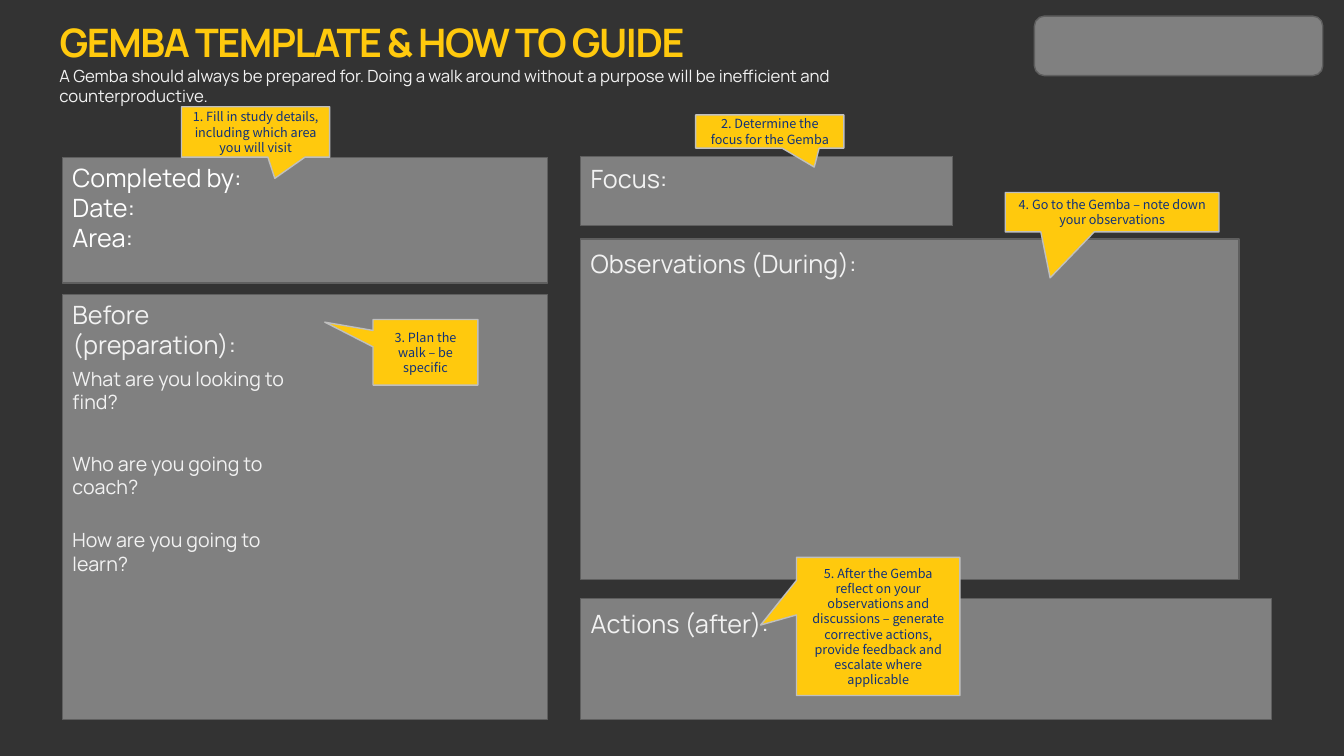
from dataclasses import dataclass

from pptx import Presentation
from pptx import util as u
from pptx.dml.color import RGBColor
from pptx.enum import shapes, text

EMU_PER_PX = 9144  # 100 px to the inch


@dataclass(frozen=True)
class Theme:
    font: str = "Manrope"
    callout_font: str = "Noto Sans CJK TC"
    background: str = "333333"
    panel: str = "808080"
    panel_line: str = "5F5F5F"
    accent: str = "FFC90D"
    callout_line: str = "BFBFBF"
    callout_text: str = "103179"
    light: str = "F2F2F2"
    white: str = "FFFFFF"
    title_size: int = 28
    heading_size: int = 18
    question_size: int = 14
    subtitle_size: int = 12
    callout_size: int = 9


def px(*lengths):
    return [u.Emu(length * EMU_PER_PX) for length in lengths]


class GembaSlide:
    def __init__(self, deck, theme):
        self.theme = theme
        self.slide = deck.slides.add_slide(deck.slide_layouts[5])
        fill = self.slide.background.fill
        fill.solid()
        fill.fore_color.rgb = RGBColor.from_string(theme.background)

    def fill_text(self, shape, lines, size, color, font=None, align=text.PP_ALIGN.LEFT,
                  anchor=text.MSO_ANCHOR.TOP):
        frame = shape.text_frame
        frame.word_wrap = True
        frame.vertical_anchor = anchor
        frame.text = "\n".join(lines)
        for para in frame.paragraphs:
            para.alignment = align
            para.font.name = font or self.theme.font
            para.font.size = u.Pt(size)
            para.font.color.rgb = RGBColor.from_string(color)
        return frame

    def title(self, words, at):
        shape = self.slide.shapes.title
        shape.left, shape.top, shape.width, shape.height = px(*at)
        frame = self.fill_text(shape, [words], self.theme.title_size, self.theme.accent)
        frame.auto_size = text.MSO_AUTO_SIZE.NONE
        frame.margin_top, frame.margin_bottom = px(2, 0)
        para = frame.paragraphs[0]
        para.line_spacing = 0.9
        para.font.bold = True
        para.runs[0]._r.get_or_add_rPr().set("spc", "-100")

    def label(self, words, at, size):
        box = self.slide.shapes.add_textbox(*px(*at))
        self.fill_text(box, [words], size, self.theme.light)

    def shape(self, kind, at, fill, line):
        shape = self.slide.shapes.add_shape(kind, *px(*at))
        shape.shadow.inherit = False
        shape.fill.solid()
        shape.fill.fore_color.rgb = RGBColor.from_string(fill)
        shape.line.color.rgb = RGBColor.from_string(line)
        shape.line.width = u.Pt(1)
        return shape

    def panel(self, at, kind=shapes.MSO_SHAPE.RECTANGLE, lines=()):
        panel = self.shape(kind, at, self.theme.panel, self.theme.panel_line)
        if lines:
            self.fill_text(panel, lines, self.theme.heading_size, self.theme.white)

    def callout(self, words, at, tip):
        """Draw a callout whose tip is given as shares of its size from its centre."""
        theme = self.theme
        callout = self.shape(shapes.MSO_SHAPE.RECTANGULAR_CALLOUT, at,
                             theme.accent, theme.callout_line)
        callout.adjustments[0], callout.adjustments[1] = tip
        self.fill_text(callout, [words], theme.callout_size, theme.callout_text,
                       theme.callout_font, text.PP_ALIGN.CENTER, text.MSO_ANCHOR.MIDDLE)


def main():
    deck = Presentation()
    deck.slide_width, deck.slide_height = px(1333, 750)
    theme = Theme()
    page = GembaSlide(deck, theme)

    page.title("GEMBA TEMPLATE & HOW TO GUIDE", (49, 21, 1234, 41))
    page.label("A Gemba should always be prepared for. Doing a walk around without a "
               "purpose will be inefficient and counterproductive.",
               (49, 60, 875, 50), theme.subtitle_size)

    page.panel((1026, 16, 286, 59), shapes.MSO_SHAPE.ROUNDED_RECTANGLE)
    left, right = 62, 576
    page.panel((left, 156, 481, 125), lines=["Completed by:", "Date:", "Area:"])
    for at in [(left, 292, 481, 422), (right, 594, 685, 120),
               (right, 237, 653, 338), (right, 155, 369, 69)]:
        page.panel(at)

    for words, at in [
        ("Before (preparation):", (left, 292, 253, 40)),
        ("Focus:", (right, 157, 329, 40)),
        ("Observations (During):", (right, 241, 468, 40)),
        ("Actions (after):", (right, 599, 468, 40)),
    ]:
        page.label(words, at, theme.heading_size)

    for words, top in [("What are you looking to find?", 359),
                       ("Who are you going to coach?", 443),
                       ("How are you going to learn?", 519)]:
        page.label(words, (left, top, 265, 34), theme.question_size)

    for words, at, tip in [
        ("1. Fill in study details, including which area you will visit",
         (180, 106, 147, 50), (0.13, 0.92)),
        ("2. Determine the focus for the Gemba", (690, 114, 147, 33), (0.3, 1.07)),
        ("3. Plan the walk – be specific", (370, 317, 104, 65), (-0.96, -0.46)),
        ("4. Go to the Gemba – note down your observations",
         (997, 191, 212, 39), (-0.29, 1.67)),
        ("5. After the Gemba reflect on your observations and discussions – generate "
         "corrective actions, provide feedback and escalate where applicable",
         (790, 553, 162, 137), (-0.72, -0.01)),
    ]:
        page.callout(words, at, tip)

    deck.save("out.pptx")


if __name__ == "__main__":
    main()
